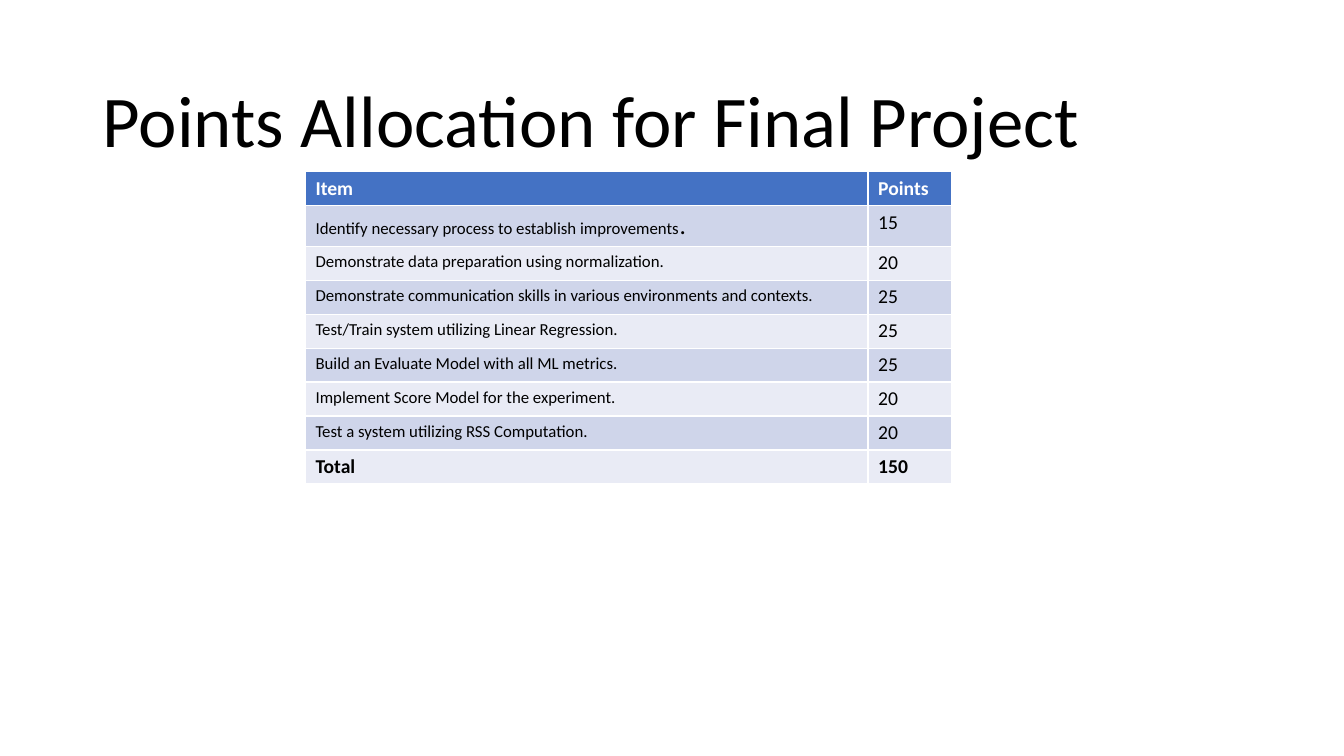
from pptx import Presentation
from pptx import util as u
from pptx.dml.color import RGBColor
from pptx.enum import text

TITLE = "Points Allocation for Final Project"
ROWS = [
    ("Item", "Points"),
    ("Identify necessary process to establish improvements.", "15"),
    ("Demonstrate data preparation using normalization.", "20"),
    ("Demonstrate communication skills in various environments and contexts.", "25"),
    ("Test/Train system utilizing Linear Regression.", "25"),
    ("Build an Evaluate Model with all ML metrics.", "25"),
    ("Implement Score Model for the experiment.", "20"),
    ("Test a system utilizing RSS Computation.", "20"),
    ("Total", "150"),
]
COLUMNS = (5.58, 0.83)
ROW_HEIGHT = 0.29
HEADER, BANDS = "4472C4", ("E9EBF5", "CFD5EA")


def style(r, size, color="000000", bold=False):
    r.font.name = "Calibri"
    r.font.size = u.Pt(size)
    r.font.bold = bold
    r.font.color.rgb = RGBColor.from_string(color)


prs = Presentation()
prs.slide_width, prs.slide_height = u.Inches(13.33), u.Inches(7.5)
s = prs.slides.add_slide(prs.slide_layouts[5])

sp = s.shapes.title
sp.left, sp.top, sp.width, sp.height = map(u.Inches, (0.92, 0.61, 11.5, 1.24))
tf = sp.text_frame
tf.text = TITLE
tf.vertical_anchor = text.MSO_ANCHOR.MIDDLE
p = tf.paragraphs[0]
p.alignment = text.PP_ALIGN.LEFT
p.line_spacing = 0.9
style(p.runs[0], 52)

table = s.shapes.add_table(
    len(ROWS), len(COLUMNS), u.Inches(3.03), u.Inches(1.7),
    u.Inches(sum(COLUMNS)), u.Inches(ROW_HEIGHT * len(ROWS))).table
for column, width in zip(table.columns, COLUMNS):
    column.width = u.Inches(width)

last = len(ROWS) - 1
for i, row in enumerate(ROWS):
    table.rows[i].height = u.Inches(ROW_HEIGHT)
    edge = i in (0, last)
    for j, words in enumerate(row):
        cell = table.cell(i, j)
        cell.fill.solid()
        cell.fill.fore_color.rgb = RGBColor.from_string(BANDS[i % 2] if i else HEADER)
        p = cell.text_frame.paragraphs[0]
        p.text = words
        style(p.runs[0], 14 if edge or j else 12, "000000" if i else "FFFFFF", edge)

p = table.cell(1, 0).text_frame.paragraphs[0]
p.runs[0].text = ROWS[1][0][:-1]
r = p.add_run()
r.text = ROWS[1][0][-1]
style(r, 18)

prs.save("out.pptx")
